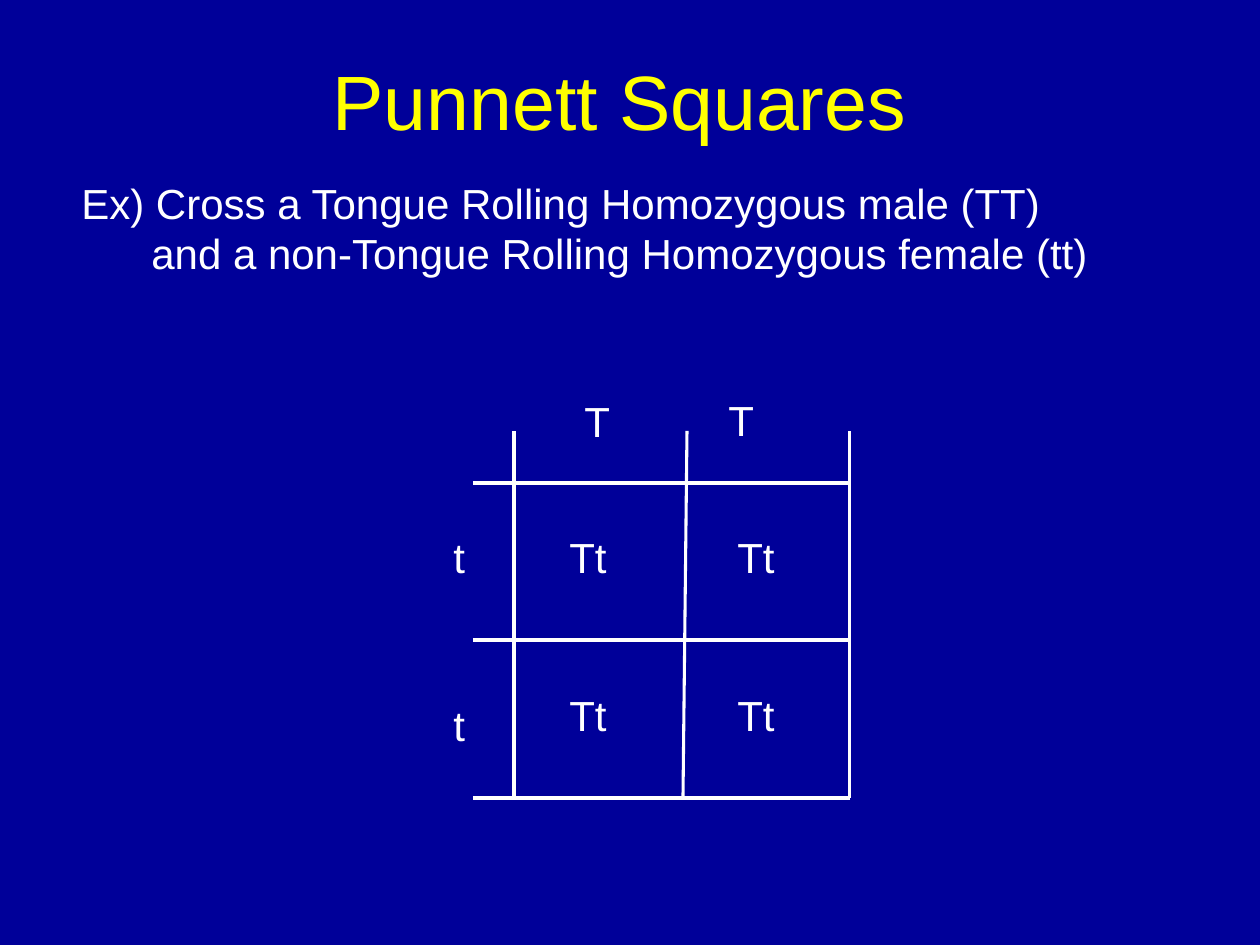
from itertools import product

from lxml.etree import SubElement
from pptx import Presentation
from pptx.dml.color import RGBColor
from pptx.enum.shapes import MSO_CONNECTOR
from pptx.enum.text import MSO_ANCHOR, MSO_AUTO_SIZE, PP_ALIGN
from pptx.oxml.ns import qn
from pptx.util import Emu, Pt

EMU_PER_PX = 914400 / 126
BLUE, YELLOW, WHITE = "000099", "FFFF00", "FFFFFF"

# Grid of the Punnett square
GRID_LEFT, GRID_TOP, GRID_RIGHT, GRID_BOTTOM = 473, 431, 850, 798
ROW_LINES = (483, 640, 798)
COLUMN_LINES = ((514, 514), (687, 683), (850, 850))  # top x, bottom x
CELL_LEFTS, CELL_TOPS = (557, 725), (525, 683)


def px(length):
    return Emu(round(length * EMU_PER_PX))


def color(hex_string):
    return RGBColor.from_string(hex_string)


def place(shape, left, top, width, height):
    shape.left, shape.top = px(left), px(top)
    shape.width, shape.height = px(width), px(height)


def format_paragraph(paragraph, size, hex_string):
    font = paragraph.font
    font.name, font.size = "Arial", Pt(size)
    font.color.rgb = color(hex_string)


def add_title(slide, text):
    title = slide.shapes.title
    place(title, 95, 21, 1071, 158)
    title.text_frame.text = text
    title.text_frame.vertical_anchor = MSO_ANCHOR.MIDDLE
    paragraph = title.text_frame.paragraphs[0]
    paragraph.alignment = PP_ALIGN.CENTER
    format_paragraph(paragraph, 44, YELLOW)


def add_text(slide, text, left, top, width, height=63, wrap=False):
    box = slide.shapes.add_textbox(px(left), px(top), px(width), px(height))
    frame = box.text_frame
    frame.text = text
    frame.word_wrap = wrap
    frame.auto_size = MSO_AUTO_SIZE.SHAPE_TO_FIT_TEXT
    for paragraph in frame.paragraphs:
        format_paragraph(paragraph, 24, WHITE)
    return frame


def add_line(group, x1, y1, x2, y2):
    line = group.shapes.add_connector(
        MSO_CONNECTOR.STRAIGHT, px(x1), px(y1), px(x2), px(y2))
    line.line.color.rgb = color(WHITE)
    line.line.width = Pt(1.75)
    SubElement(line._element.spPr, qn("a:effectLst"))


def add_grid(slide):
    group = slide.shapes.add_group_shape()
    for top_x, bottom_x in COLUMN_LINES:
        add_line(group, bottom_x, GRID_BOTTOM, top_x, GRID_TOP)
    for y in ROW_LINES:
        add_line(group, GRID_LEFT, y, GRID_RIGHT, y)


def main():
    presentation = Presentation()
    presentation.slide_width, presentation.slide_height = px(1260), px(945)
    slide = presentation.slides.add_slide(presentation.slide_layouts[5])
    slide.background.fill.solid()
    slide.background.fill.fore_color.rgb = color(BLUE)

    # Title and example
    add_title(slide, "Punnett Squares ")
    example = add_text(
        slide,
        "Ex) Cross a Tongue Rolling Homozygous male (TT)\n"
        "and a non-Tongue Rolling Homozygous female (tt)",
        69, 171, 1159, 113, wrap=True)
    second_line = example.paragraphs[1]._p.get_or_add_pPr()
    second_line.set("marL", str(px(70)))

    # Punnett square
    add_grid(slide)
    for left, top in ((572, 389), (716, 388)):
        add_text(slide, "T", left, top, 50)
    for top, left in product(CELL_TOPS, CELL_LEFTS):
        add_text(slide, "Tt", left, top, 63)
    for top in (525, 693):
        add_text(slide, "t", 441, top, 37)

    presentation.save("out.pptx")


if __name__ == "__main__":
    main()
